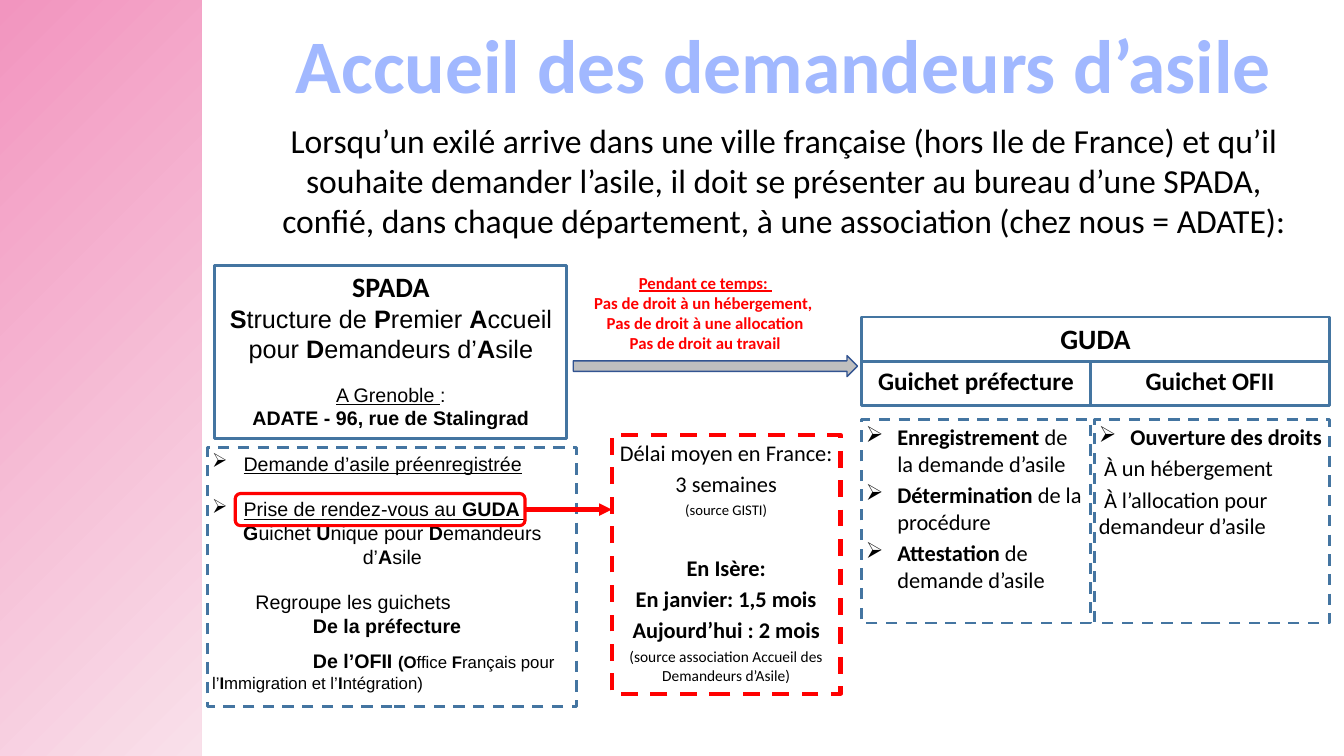
from dataclasses import dataclass

from lxml.etree import SubElement
from pptx import Presentation
from pptx.dml.color import RGBColor
from pptx.enum.dml import MSO_LINE
from pptx.enum.shapes import MSO_CONNECTOR, MSO_SHAPE as Shape
from pptx.enum.text import MSO_ANCHOR, MSO_AUTO_SIZE, PP_ALIGN as Align
from pptx.oxml.ns import qn
from pptx.util import Pt


@dataclass(frozen=True)
class Theme:
    title: str = "A1B8FF"
    text: str = "000000"
    alert: str = "FF0000"
    frame: str = "4475A1"
    arrow_fill: str = "BFBFBF"
    arrow_line: str = "325491"
    band_start: str = "F295BF"
    band_end: str = "F9E0EA"
    sans: str = "Calibri"
    plain: str = "Arial"
    title_size: float = 54
    intro_size: float = 24
    heading_size: float = 20
    subheading_size: float = 18
    body_size: float = 16
    step_size: float = 14
    small_size: float = 12
    source_size: float = 11
    tiny_size: float = 10.5


THEME = Theme()
BULLET_INDENT = 22.5


@dataclass(frozen=True)
class Line:
    """Text where * toggles bold, _ toggles underline and | starts small type."""
    text: str
    size: float = THEME.body_size
    font: str = THEME.sans
    color: str = THEME.text
    align: Align = Align.CENTER
    bullet: bool = False
    left: float = 0
    first: float = 0
    before: float = 0
    after: float = 0


def rgb(value):
    return RGBColor.from_string(value)


def add_runs(paragraph, line):
    bold = underline = False
    for size, sized_text in zip((line.size, THEME.small_size), line.text.split("|")):
        for bold_index, weighted_text in enumerate(sized_text.split("*")):
            bold ^= bold_index > 0
            for underline_index, text in enumerate(weighted_text.split("_")):
                underline ^= underline_index > 0
                if text:
                    run = paragraph.add_run()
                    run.text = text
                    font = run.font
                    font.name, font.size = line.font, Pt(size)
                    font.bold, font.underline = bold, underline
                    font.color.rgb = rgb(line.color)


def write(shape, lines, margins=(3, 3)):
    frame = shape.text_frame
    frame.word_wrap = True
    frame.auto_size = MSO_AUTO_SIZE.NONE
    frame.vertical_anchor = MSO_ANCHOR.TOP
    frame.margin_left = frame.margin_right = Pt(margins[0])
    frame.margin_top = frame.margin_bottom = Pt(margins[1])
    for index, line in enumerate(lines):
        paragraph = frame.add_paragraph() if index else frame.paragraphs[0]
        paragraph.alignment = Align.LEFT if line.bullet else line.align
        paragraph.space_before, paragraph.space_after = Pt(line.before), Pt(line.after)
        properties = paragraph._p.get_or_add_pPr()
        left, first = (BULLET_INDENT, -BULLET_INDENT) if line.bullet else (line.left, line.first)
        properties.set("marL", str(Pt(left)))
        properties.set("indent", str(Pt(first)))
        if line.bullet:
            SubElement(properties, qn("a:buChar"), char="➢")
        add_runs(paragraph, line)


def place(shape, box):
    shape.left, shape.top, shape.width, shape.height = map(Pt, box)


def add_title(slide, box, line):
    place(slide.shapes.title, box)
    write(slide.shapes.title, [line], (7.2, 3.6))


def add_text(slide, box, lines):
    write(slide.shapes.add_textbox(*map(Pt, box)), lines, (7.2, 3.6))


def add_box(slide, box, lines=(), color=THEME.frame, width=2.0, dashed=False,
            kind=Shape.RECTANGLE, fill=None):
    shape = slide.shapes.add_shape(kind, *map(Pt, box))
    shape.shadow.inherit = False
    if fill:
        shape.fill.solid()
        shape.fill.fore_color.rgb = rgb(fill)
    else:
        shape.fill.background()
    shape.line.color.rgb = rgb(color)
    shape.line.width = Pt(width)
    if dashed:
        shape.line.dash_style = MSO_LINE.DASH
    write(shape, lines)
    return shape


def add_band(slide, box):
    band = slide.shapes.add_shape(Shape.RECTANGLE, *map(Pt, box))
    band.shadow.inherit = False
    band.line.fill.background()
    band.fill.gradient()
    band.fill.gradient_angle = 315
    for stop, color in zip(band.fill.gradient_stops, (THEME.band_start, THEME.band_end)):
        stop.color.rgb = rgb(color)


def add_arrow(slide, source, end):
    arrow = slide.shapes.add_connector(MSO_CONNECTOR.STRAIGHT, 0, 0, *map(Pt, end))
    arrow.begin_connect(source, 3)
    arrow.line.color.rgb = rgb(THEME.alert)
    arrow.line.width = Pt(3)
    SubElement(arrow.line._get_or_add_ln(), qn("a:tailEnd"), type="triangle")
    SubElement(arrow._element.spPr, qn("a:effectLst"))


def spada_lines():
    step = dict(size=THEME.step_size, font=THEME.plain)
    heading = [
        Line("*SPADA*", THEME.heading_size),
        Line("*S*tructure de *P*remier *A*ccueil pour *D*emandeurs d’*A*sile",
             THEME.subheading_size, THEME.plain),
        Line("_A Grenoble _:", before=13.5, **step),
        Line("*ADATE - 96, rue de Stalingrad*", **step),
    ]
    steps = [
        Line("_Demande d’asile préenregistrée_", bullet=True, **step),
        Line("_Prise de rendez-vous au *GUDA* _", bullet=True, before=16, **step),
        Line("*G*uichet *U*nique pour *D*emandeurs d’*A*sile", **step),
        Line("Regroupe les guichets", align=Align.LEFT, left=31, before=16, **step),
        Line("*De la préfecture*", align=Align.LEFT, left=72, **step),
        Line("*De l’OFII |(O*ffice* F*rançais pour l’*I*mmigration et l’*I*ntégration)",
             align=Align.LEFT, first=72, before=8.5, **step),
    ]
    return heading, steps


def main():
    presentation = Presentation()
    presentation.slide_width, presentation.slide_height = Pt(960), Pt(540)
    slide = presentation.slides.add_slide(presentation.slide_layouts[5])

    add_band(slide, (0, 0, 144, 540))
    add_title(slide, (196, 9.5, 728, 72.5),
              Line("*Accueil des demandeurs d’asile*", THEME.title_size,
                   color=THEME.title, after=6))
    add_text(slide, (188, 82, 744, 94.5), [Line(
        "Lorsqu’un exilé arrive dans une ville française (hors Ile de France) et qu’il "
        "souhaite demander l’asile, il doit se présenter au bureau d’une SPADA, confié, "
        "dans chaque département, à une association (chez nous = ADATE):", THEME.intro_size)])

    heading, steps = spada_lines()
    add_box(slide, (153.5, 189.5, 251.5, 124), heading)
    add_box(slide, (148.5, 319.5, 263.5, 185), steps, dashed=True)
    add_box(slide, (409.5, 254, 203, 15), color=THEME.arrow_line, width=1,
            kind=Shape.RIGHT_ARROW, fill=THEME.arrow_fill)
    add_text(slide, (410.5, 191, 186.5, 65.5), [
        Line(f"*{text}*", THEME.small_size, color=THEME.alert) for text in (
            "_Pendant ce temps: _", "Pas de droit à un hébergement, ",
            "Pas de droit à une allocation", "Pas de droit au travail")])

    add_box(slide, (615.5, 226.5, 334, 31.5), [Line("*GUDA*", THEME.heading_size)])
    prefecture = [Line(text, bullet=True, after=3) for text in (
        "*Enregistrement* de la demande d’asile", "*Détermination* de la procédure",
        "*Attestation* de demande d’asile")]
    ofii = [Line("*Ouverture des droits*", bullet=True, after=3)] + [
        Line(text, align=Align.LEFT, after=3) for text in (
            " À un hébergement", " À l’allocation pour demandeur d’asile")]
    for name, left, width, gap, details in (
            ("Guichet préfecture", 615.5, 163.5, 0, prefecture),
            ("Guichet OFII", 779, 170.5, 3, ofii)):
        add_box(slide, (left, 258, width, 31.5), [Line(f"*{name}*", THEME.subheading_size)])
        add_box(slide, (left + gap, 299.5, width - gap, 145.5), details, dashed=True)

    appointment = add_box(slide, (168, 352.5, 207, 23), color=THEME.alert, width=2.25,
                          kind=Shape.ROUNDED_RECTANGLE)
    add_arrow(slide, appointment, (437, 364))
    add_box(slide, (437, 310.5, 163.5, 185), [
        Line("Délai moyen en France:", after=3),
        Line("3 semaines", after=3),
        Line("(source GISTI)", THEME.tiny_size, after=3),
        Line("*En Isère:*", before=22.5, after=3),
        Line("*En janvier: 1,5 mois*", after=3),
        Line("*Aujourd’hui : 2 mois*", after=3),
        Line("(source association Accueil des Demandeurs d’Asile)", THEME.source_size, after=3),
    ], color=THEME.alert, width=3, dashed=True)

    presentation.save("out.pptx")


if __name__ == "__main__":
    main()
